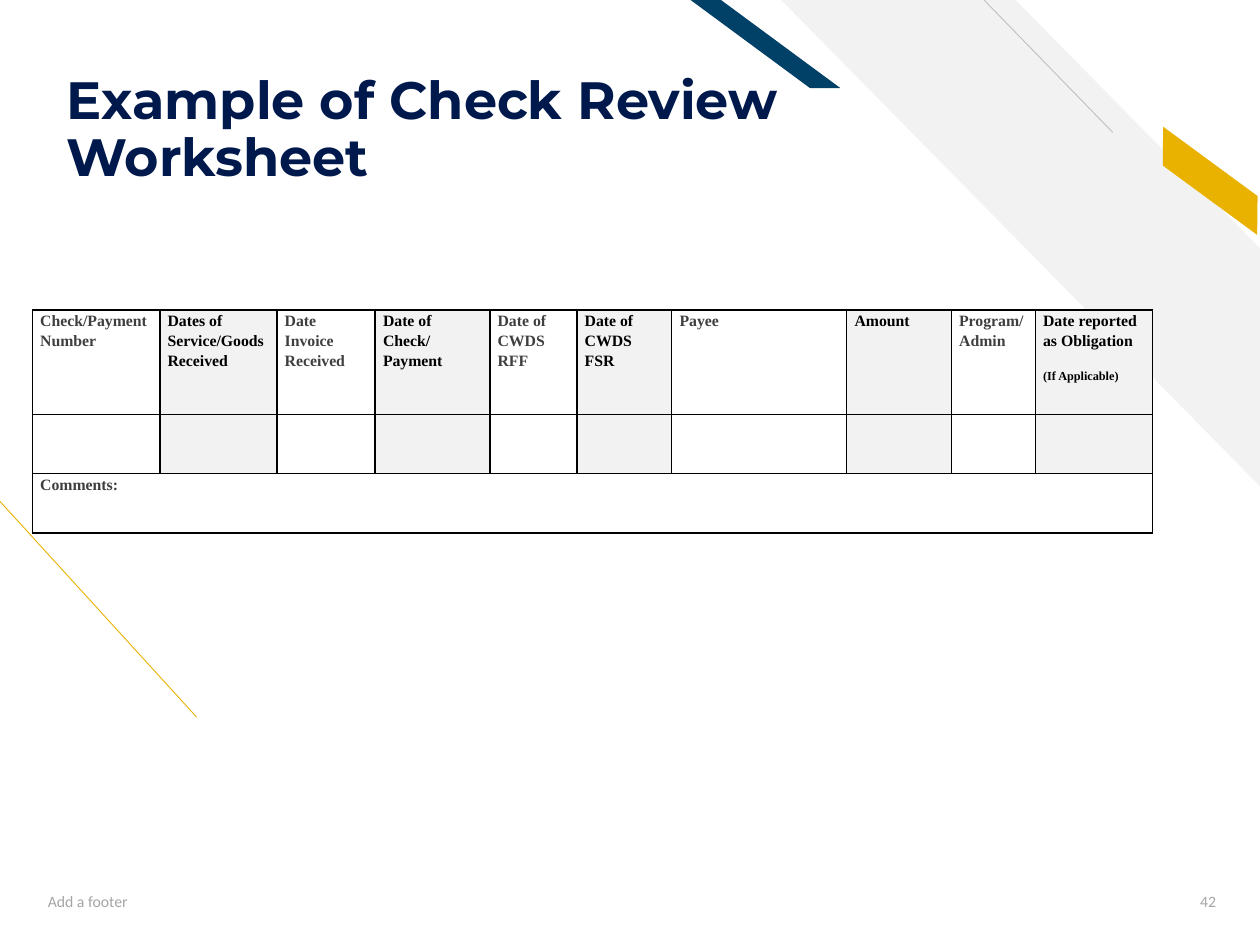
from lxml.etree import SubElement
from pptx import Presentation
from pptx.dml.color import RGBColor
from pptx.enum.shapes import MSO_CONNECTOR, MSO_SHAPE
from pptx.enum.text import MSO_ANCHOR, MSO_AUTO_SIZE, PP_ALIGN
from pptx.oxml import parse_xml
from pptx.oxml.ns import nsdecls, qn
from pptx.util import Pt

NAVY = RGBColor(0x00, 0x19, 0x4C)
BLUE = RGBColor(0x01, 0x40, 0x67)
GOLD = RGBColor(0xEA, 0xB2, 0x00)
PALE = RGBColor(0xF2, 0xF2, 0xF2)
SILVER = RGBColor(0xBF, 0xBF, 0xBF)
GRAY = RGBColor(0xA5, 0xA5, 0xA5)
DARK = RGBColor(0x3F, 0x3F, 0x3F)
BLACK = RGBColor(0, 0, 0)


def write(paragraph, text, color, **formats):
    span = paragraph.add_run()
    span.text = text
    span.font.color.rgb = color
    for name, value in formats.items():
        setattr(span.font, name, value)


def format_cell(cell, fill):
    margins = {"margin_left": 4.5, "margin_right": 4.5, "margin_top": 0, "margin_bottom": 0}
    for name, value in margins.items():
        setattr(cell, name, Pt(value))
    properties = cell._tc.get_or_add_tcPr()
    for side in ("lnL", "lnR", "lnT", "lnB"):
        properties.append(parse_xml(
            f'<a:{side} {nsdecls("a")} w="{Pt(1)}"><a:solidFill>'
            f'<a:srgbClr val="{BLACK}"/></a:solidFill></a:{side}>'))
    if fill:
        cell.fill.solid()
        cell.fill.fore_color.rgb = fill
    else:
        cell.fill.background()


deck = Presentation()
deck.slide_width, deck.slide_height = Pt(720), Pt(540)
page = deck.slides.add_slide(deck.slide_layouts[5])

stripes = [
    (MSO_SHAPE.DIAGONAL_STRIPE, (446.4, 0, 274.3, 278.6), 0, 0.512, PALE),
    (MSO_SHAPE.PARALLELOGRAM, (651.6, 94.3, 79.9, 18), 36.3, 0.72, GOLD),
    (MSO_SHAPE.PARALLELOGRAM, (394.6, 0, 85.7, 50.4), 0, 1.356, BLUE),
]
for kind, bounds, rotation, adjustment, color in stripes:
    stripe = page.shapes.add_shape(kind, *map(Pt, bounds))
    stripe.adjustments[0] = adjustment
    stripe.rotation = rotation
    stripe._element.spPr.xfrm.set("flipH", "1")
    stripe.shadow.inherit = False
    stripe.fill.solid()
    stripe.fill.fore_color.rgb = color
    stripe.line.fill.background()

accent_lines = [
    ((112.3, 409.7, -0.7, 285.8), GOLD),
    ((635.8, 75.6, 562.3, 0), SILVER),
]
for ends, color in accent_lines:
    accent = page.shapes.add_connector(MSO_CONNECTOR.STRAIGHT, *map(Pt, ends))
    accent.line.color.rgb = color
    accent.line.width = Pt(0.5)
    SubElement(accent._element.spPr, qn("a:effectLst"))

title = page.shapes.title
title_place = {"left": 31, "top": 16.6, "width": 491.8, "height": 90.7}
for name, value in title_place.items():
    setattr(title, name, Pt(value))
title_format = {
    "word_wrap": True, "auto_size": MSO_AUTO_SIZE.NONE, "vertical_anchor": MSO_ANCHOR.BOTTOM,
    "margin_left": Pt(7.2), "margin_right": Pt(7.2), "margin_top": Pt(3.6), "margin_bottom": 0,
}
for name, value in title_format.items():
    setattr(title.text_frame, name, value)
heading = title.text_frame.paragraphs[0]
heading.alignment = PP_ALIGN.LEFT
heading.line_spacing = 0.9
write(heading, "Example of Check Review Worksheet", NAVY,
      name="Montserrat", size=Pt(30), bold=True)

footers = [
    ("Add a footer", 20.2, 243.4, PP_ALIGN.LEFT),
    ("42", 658.1, 43.9, PP_ALIGN.RIGHT),
]
for text, left, width, alignment in footers:
    box = page.shapes.add_textbox(Pt(left), Pt(500.4), Pt(width), Pt(28.8))
    box.text_frame.word_wrap = True
    box.text_frame.vertical_anchor = MSO_ANCHOR.MIDDLE
    box.text_frame.paragraphs[0].alignment = alignment
    write(box.text_frame.paragraphs[0], text, GRAY, name="Calibri", size=Pt(9))

columns = [
    ("Check/Payment Number", 72.8), ("Dates of Service/Goods Received", 66.9),
    ("Date Invoice Received", 56.2), ("Date of Check/ Payment", 65.5),
    ("Date of CWDS RFF", 49.8), ("Date of CWDS FSR", 54.2), ("Payee", 100),
    ("Amount", 59.8), ("Program/ Admin", 48), ("Date reported as Obligation", 66.9),
]
row_heights = [59.8, 33.8, 33.8]
worksheet = page.shapes.add_table(
    len(row_heights), len(columns), Pt(18.5), Pt(177.1),
    Pt(sum(width for _, width in columns)), Pt(sum(row_heights))).table
worksheet.first_row = worksheet.horz_banding = False
for row, height in zip(worksheet.rows, row_heights):
    row.height = Pt(height)

entries = []
for index, (label, width) in enumerate(columns):
    worksheet.columns[index].width = Pt(width)
    shaded = index % 2 == 1
    for row_index in range(len(row_heights)):
        fill = PALE if shaded and row_index < 2 else None
        format_cell(worksheet.cell(row_index, index), fill)
    entries.append((worksheet.cell(0, index), label, BLACK if shaded else DARK))

comments = worksheet.cell(2, 0)
comments.merge(worksheet.cell(2, len(columns) - 1))
entries.append((comments, "Comments:", DARK))
for cell, text, color in entries:
    write(cell.text_frame.paragraphs[0], text, color,
          name="Times New Roman", size=Pt(9), bold=True)

obligation = worksheet.cell(0, len(columns) - 1)
write(obligation.text_frame.add_paragraph(), "(If Applicable)", BLACK,
      name="Times New Roman", size=Pt(7), bold=True)
for cell, _, _ in entries:
    for paragraph in cell.text_frame.paragraphs:
        paragraph.line_spacing = 1.15
        paragraph.space_after = Pt(10)

deck.save("out.pptx")
